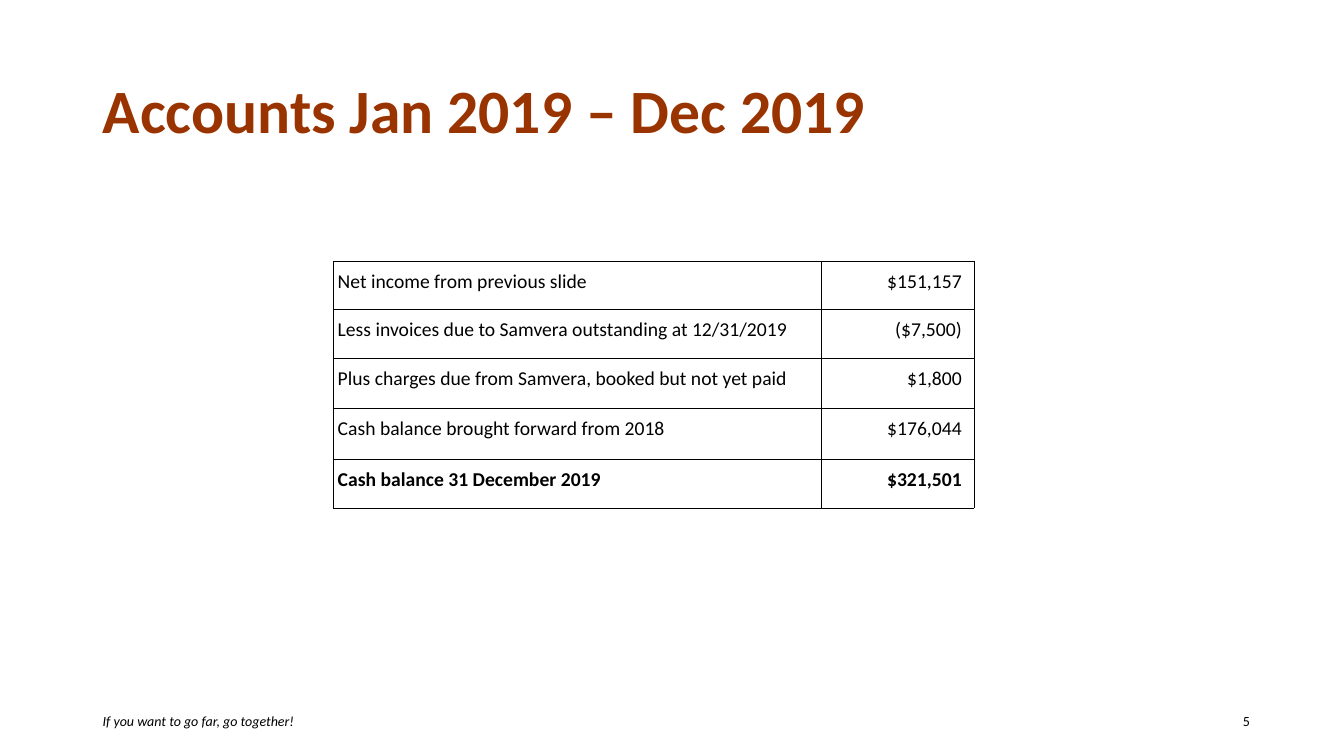
from lxml.etree import SubElement
from pptx import Presentation
from pptx.dml.color import RGBColor
from pptx.enum.text import MSO_ANCHOR, MSO_AUTO_SIZE, PP_ALIGN
from pptx.oxml.ns import qn
from pptx.util import Inches, Pt

BLACK = RGBColor(0x00, 0x00, 0x00)
RUST = RGBColor(0x99, 0x33, 0x00)
FONT = "Calibri"

SLIDE_WIDTH, SLIDE_HEIGHT = Inches(13.33), Inches(7.5)
MARGIN = Inches(0.92)
FOOTER_TOP, FOOTER_HEIGHT = Inches(7.02), Inches(0.27)

COLUMN_WIDTHS = (4.84, 1.51)
ROW_HEIGHTS = (0.48, 0.48, 0.5, 0.51, 0.48)
ACCOUNTS = (
    ("Net income from previous slide", "$151,157"),
    ("Less invoices due to Samvera outstanding at 12/31/2019", "($7,500)"),
    ("Plus charges due from Samvera, booked but not yet paid", "$1,800"),
    ("Cash balance brought forward from 2018", "$176,044"),
    ("Cash balance 31 December 2019", "$321,501"),
)


def set_font(paragraph, size, color=BLACK, bold=False, italic=False):
    font = paragraph.font
    font.name, font.size = FONT, Pt(size)
    font.bold, font.italic = bold, italic
    font.color.rgb = color


def set_title(page, text):
    title = page.shapes.title
    title.left, title.top = MARGIN, Inches(0.4)
    title.width, title.height = Inches(11.5), Inches(1.45)
    frame = title.text_frame
    frame.text = text
    frame.word_wrap = True
    frame.auto_size = MSO_AUTO_SIZE.NONE
    frame.vertical_anchor = MSO_ANCHOR.MIDDLE
    para = frame.paragraphs[0]
    para.alignment = PP_ALIGN.LEFT
    para.line_spacing = 0.9
    set_font(para, 44, RUST, bold=True)


def add_footer(page, text, left, width, italic=False):
    box = page.shapes.add_textbox(left, FOOTER_TOP, width, FOOTER_HEIGHT)
    frame = box.text_frame
    frame.text = text
    frame.word_wrap = False
    frame.auto_size = MSO_AUTO_SIZE.SHAPE_TO_FIT_TEXT
    set_font(frame.paragraphs[0], 10, italic=italic)


def add_borders(cell):
    properties = cell._tc.get_or_add_tcPr()
    for side in ("a:lnL", "a:lnR", "a:lnT", "a:lnB"):
        line = SubElement(properties, qn(side), w=str(Pt(0.5)))
        fill = SubElement(line, qn("a:solidFill"))
        SubElement(fill, qn("a:srgbClr"), val=str(BLACK))


def fill_cell(cell, text, is_amount, bold):
    add_borders(cell)
    cell.fill.background()
    cell.margin_left = cell.margin_top = cell.margin_bottom = Inches(0.04)
    cell.margin_right = Inches(0.12 if is_amount else 0.04)
    cell.text = text
    para = cell.text_frame.paragraphs[0]
    para.alignment = PP_ALIGN.RIGHT if is_amount else PP_ALIGN.LEFT
    para.line_spacing = 1.19
    para.space_after = Pt(6)
    set_font(para, 14, bold=bold)


def add_accounts_table(page):
    table = page.shapes.add_table(
        len(ACCOUNTS), len(COLUMN_WIDTHS), Inches(3.31), Inches(2.59),
        Inches(sum(COLUMN_WIDTHS)), Inches(sum(ROW_HEIGHTS))).table
    table.first_row = table.horz_banding = False
    for column, width in zip(table.columns, COLUMN_WIDTHS):
        column.width = Inches(width)
    for row, height in zip(table.rows, ROW_HEIGHTS):
        row.height = Inches(height)
    for row_index, entry in enumerate(ACCOUNTS):
        is_total = row_index == len(ACCOUNTS) - 1
        for column_index, text in enumerate(entry):
            fill_cell(table.cell(row_index, column_index), text,
                      is_amount=column_index == 1, bold=is_total)


def main():
    deck = Presentation()
    deck.slide_width, deck.slide_height = SLIDE_WIDTH, SLIDE_HEIGHT
    page = deck.slides.add_slide(deck.slide_layouts.get_by_name("Title Only"))
    add_footer(page, "If you want to go far, go together!", MARGIN,
               Inches(2.14), italic=True)
    add_footer(page, "5", Inches(12.23), Inches(0.37))
    set_title(page, "Accounts Jan 2019 – Dec 2019")
    add_accounts_table(page)
    deck.save("out.pptx")


if __name__ == "__main__":
    main()
